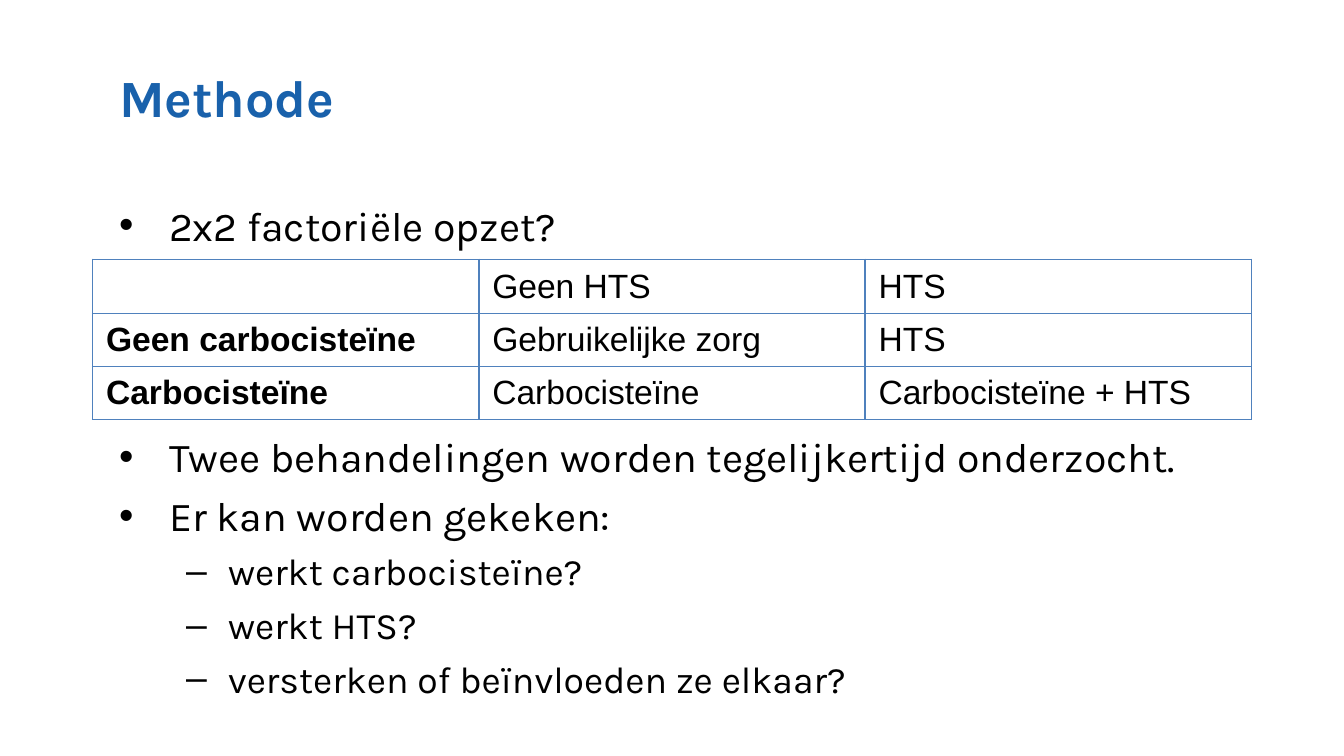
"""Build the Methode slide: a 2x2 factorial table inside a bulleted list."""
from dataclasses import dataclass

from lxml.etree import SubElement
from pptx import Presentation
from pptx.dml.color import RGBColor
from pptx.enum.text import MSO_ANCHOR as Anchor
from pptx.oxml.ns import qn
from pptx.util import Cm, Pt

COLORS = {"title": "1961AB", "text": "000000", "border": "4F81BD"}


@dataclass(frozen=True)
class Level:
    bullet: str
    size: float
    indent: float
    hang: float
    before: float


@dataclass(frozen=True)
class Item:
    text: str
    level: Level
    before: float | None = None


MAIN = Level("•", 22, 0.95, 0.95, 5.1)
SUB = Level("–", 20, 2.06, 0.79, 4.7)
TABLE_GAP = 97.5

ITEMS = [
    Item("2x2 factoriële opzet?", MAIN, 0),
    Item("Twee behandelingen worden tegelijkertijd onderzocht.", MAIN, TABLE_GAP),
    Item("Er kan worden gekeken:", MAIN),
    Item("werkt carbocisteïne?", SUB),
    Item("werkt HTS?", SUB),
    Item("versterken of beïnvloeden ze elkaar?", SUB),
]
ROWS = [
    ("", "Geen HTS", "HTS"),
    ("Geen carbocisteïne", "Gebruikelijke zorg", "HTS"),
    ("Carbocisteïne", "Carbocisteïne", "Carbocisteïne + HTS"),
]
ROW_HEIGHTS = (1.02, 0.97, 0.97)
COL_WIDTH = 7.3


def write(p, text: str, *, size: float, font: str = "Karla",
          color: str = "text", bold: bool = False) -> None:
    r = p.add_run()
    r.text = text
    r.font.name = font
    r.font.size = Pt(size)
    r.font.bold = bold
    r.font.color.rgb = RGBColor.from_string(COLORS[color])


def add_box(s, top: float, height: float):
    tf = s.shapes.add_textbox(Cm(2), Cm(top), Cm(20.96), Cm(height)).text_frame
    tf.word_wrap = True
    tf.margin_top = Cm(0.2)
    return tf


def add_item(p, item: Item) -> None:
    level = item.level
    pPr = p._p.get_or_add_pPr()
    pPr.set("marL", str(Cm(level.indent)))
    pPr.set("indent", str(-Cm(level.hang)))
    SubElement(pPr, qn("a:buFont"), typeface="Arial")
    SubElement(pPr, qn("a:buChar"), char=level.bullet)
    p.level = 1 if level is SUB else 0
    p.space_before = Pt(level.before if item.before is None else item.before)
    write(p, item.text, size=level.size)


def add_borders(cell) -> None:
    tcPr = cell._tc.get_or_add_tcPr()
    for side in ("lnL", "lnR", "lnT", "lnB"):
        ln = SubElement(tcPr, qn(f"a:{side}"), w=str(Pt(1)))
        fill = SubElement(ln, qn("a:solidFill"))
        SubElement(fill, qn("a:srgbClr"), val=COLORS["border"])


def add_grid(s) -> None:
    n_rows, n_cols = len(ROWS), len(ROWS[0])
    table = s.shapes.add_table(n_rows, n_cols, Cm(1.75), Cm(4.9),
                               Cm(COL_WIDTH * n_cols), Cm(sum(ROW_HEIGHTS))).table
    table.first_row = table.horz_banding = False
    for col in table.columns:
        col.width = Cm(COL_WIDTH)
    for i, texts in enumerate(ROWS):
        table.rows[i].height = Cm(ROW_HEIGHTS[i])
        for j, text in enumerate(texts):
            cell = table.cell(i, j)
            add_borders(cell)
            cell.fill.background()
            cell.vertical_anchor = Anchor.MIDDLE
            cell.margin_top = cell.margin_bottom = Cm(0.12)
            if text:
                write(cell.text_frame.paragraphs[0], text, size=18,
                      font="Arial", bold=j == 0)


def main() -> None:
    prs = Presentation()
    prs.slide_width, prs.slide_height = Cm(25.4), Cm(14.28)
    s = prs.slides.add_slide(prs.slide_layouts[6])
    write(add_box(s, 1.04, 2.26).paragraphs[0], "Methode",
          size=28, color="title", bold=True)
    tf = add_box(s, 3.58, 9.7)
    for i, item in enumerate(ITEMS):
        add_item(tf.add_paragraph() if i else tf.paragraphs[0], item)
    add_grid(s)
    prs.save("out.pptx")


if __name__ == "__main__":
    main()
